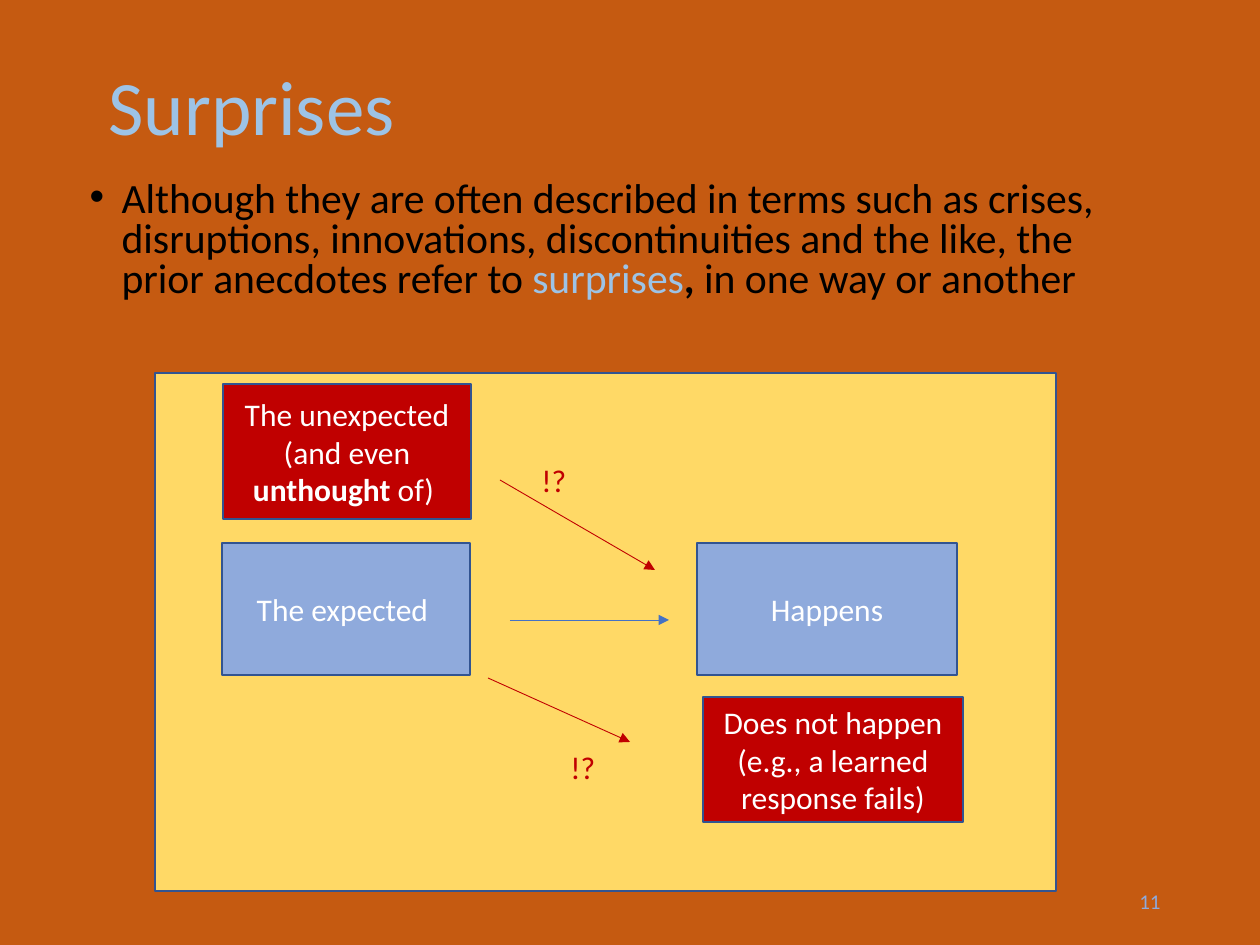
from lxml import etree
from pptx import Presentation
from pptx.dml.color import RGBColor
from pptx.enum.shapes import MSO_CONNECTOR, MSO_SHAPE
from pptx.enum.text import MSO_ANCHOR, MSO_AUTO_SIZE, PP_ALIGN
from pptx.oxml.ns import qn
from pptx.util import Pt

LEFT, CENTER, RIGHT = PP_ALIGN.LEFT, PP_ALIGN.CENTER, PP_ALIGN.RIGHT
TOP, MIDDLE = MSO_ANCHOR.TOP, MSO_ANCHOR.MIDDLE
FIXED = MSO_AUTO_SIZE.NONE
RECTANGLE, STRAIGHT = MSO_SHAPE.RECTANGLE, MSO_CONNECTOR.STRAIGHT

PX_PER_INCH = 126
FONT = "Calibri"
COLORS = {
    "background": "C55A11",
    "accent": "9DC3E6",
    "black": "000000",
    "white": "FFFFFF",
    "number": "8FAADC",
    "panel": "FFD966",
    "expected": "8FAADC",
    "surprise": "C00000",
    "outline": "325491",
    "arrow": "4472C4",
}


def px(length):
    return round(length * 914400 / PX_PER_INCH)


def rgb(name):
    return RGBColor.from_string(COLORS[name])


def write(holder, runs, size=18, color="white", align=LEFT, anchor=TOP,
          spacing=None, bullet=False):
    frame = holder.text_frame
    frame.word_wrap = True
    frame.auto_size = FIXED
    frame.vertical_anchor = anchor
    paragraph = frame.paragraphs[0]
    if bullet:
        properties = paragraph._p.get_or_add_pPr()
        properties.set("marL", str(px(32)))
        properties.set("indent", str(-px(32)))
        etree.SubElement(properties, qn("a:buFont"), typeface="Arial")
        etree.SubElement(properties, qn("a:buChar"), char="•")
    paragraph.alignment = align
    paragraph.space_before = Pt(0)
    if spacing:
        paragraph.line_spacing = spacing
    for text, run_color, bold in runs:
        run = paragraph.add_run()
        run.text = text
        run.font.name = FONT
        run.font.size = Pt(size)
        run.font.bold = bold
        run.font.color.rgb = rgb(run_color or color)


def place(holder, left, top, width, height):
    holder.left, holder.top = px(left), px(top)
    holder.width, holder.height = px(width), px(height)


def add_label(slide, box, text, **style):
    label = slide.shapes.add_textbox(*map(px, box))
    write(label, [(text, None, False)], **style)


def add_block(slide, box, fill, runs=()):
    block = slide.shapes.add_shape(RECTANGLE, *map(px, box))
    block.shadow.inherit = False
    block.fill.solid()
    block.fill.fore_color.rgb = rgb(fill)
    block.line.color.rgb = rgb("outline")
    block.line.width = Pt(1)
    write(block, runs, align=CENTER, anchor=MIDDLE)


def add_arrow(slide, start, end, color):
    arrow = slide.shapes.add_connector(STRAIGHT, *map(px, start + end))
    arrow.line.color.rgb = rgb(color)
    arrow.line.width = Pt(0.5)
    etree.SubElement(arrow.line._get_or_add_ln(), qn("a:tailEnd"), type="triangle")
    etree.SubElement(arrow._element.spPr, qn("a:effectLst"))


def add_heading(slide, box):
    title = slide.shapes.title
    place(title, *box)
    write(title, [("Surprises", None, False)], size=44, color="accent",
          anchor=MIDDLE, spacing=0.9)


def add_statement(slide, box):
    statement = slide.placeholders[1]
    place(statement, *box)
    write(statement, [
        ("Although they are often described in terms such as crises, "
         "disruptions, innovations, discontinuities and the like, the "
         "prior anecdotes refer to ", None, False),
        ("surprises", "accent", False),
        (", ", None, True),
        ("in one way or another", None, False),
    ], size=23.8, color="black", spacing=0.8, bullet=True)


def add_diagram(slide, box):
    left, top, _, _ = box
    add_block(slide, box, "panel")

    blocks = [
        ((67, 170, 248, 132), "expected", [("The expected ", None, False)]),
        ((542, 170, 260, 132), "expected", [("Happens", None, False)]),
        ((548, 324, 260, 125), "surprise",
         [("Does not happen (e.g., a learned response fails)", None, False)]),
        ((68, 11, 248, 135), "surprise",
         [("The unexpected (and even ", None, False),
          ("unthought ", None, True), ("of) ", None, False)]),
    ]
    for (x, y, width, height), fill, runs in blocks:
        add_block(slide, (left + x, top + y, width, height), fill, runs)

    arrows = [
        ((355, 247), (514, 247), "arrow"),
        ((345, 107), (500, 197), "surprise"),
        ((333, 305), (475, 369), "surprise"),
    ]
    for (x1, y1), (x2, y2), color in arrows:
        add_arrow(slide, (left + x1, top + y1), (left + x2, top + y2), color)

    for x, y in ((374, 82), (403, 369)):
        add_label(slide, (left + x, top + y, 62, 50), "!?", color="surprise")


def main():
    presentation = Presentation()
    presentation.slide_width, presentation.slide_height = px(1260), px(945)
    slide = presentation.slides.add_slide(presentation.slide_layouts[1])
    slide.background.fill.solid()
    slide.background.fill.fore_color.rgb = rgb("background")

    add_heading(slide, (96, 19, 1086, 183))
    add_statement(slide, (77, 175, 1086, 144))
    add_label(slide, (890, 876, 283, 50), "11", size=12, color="number",
              align=RIGHT, anchor=MIDDLE)
    add_diagram(slide, (155, 373, 901, 518))
    presentation.save("out.pptx")


if __name__ == "__main__":
    main()
